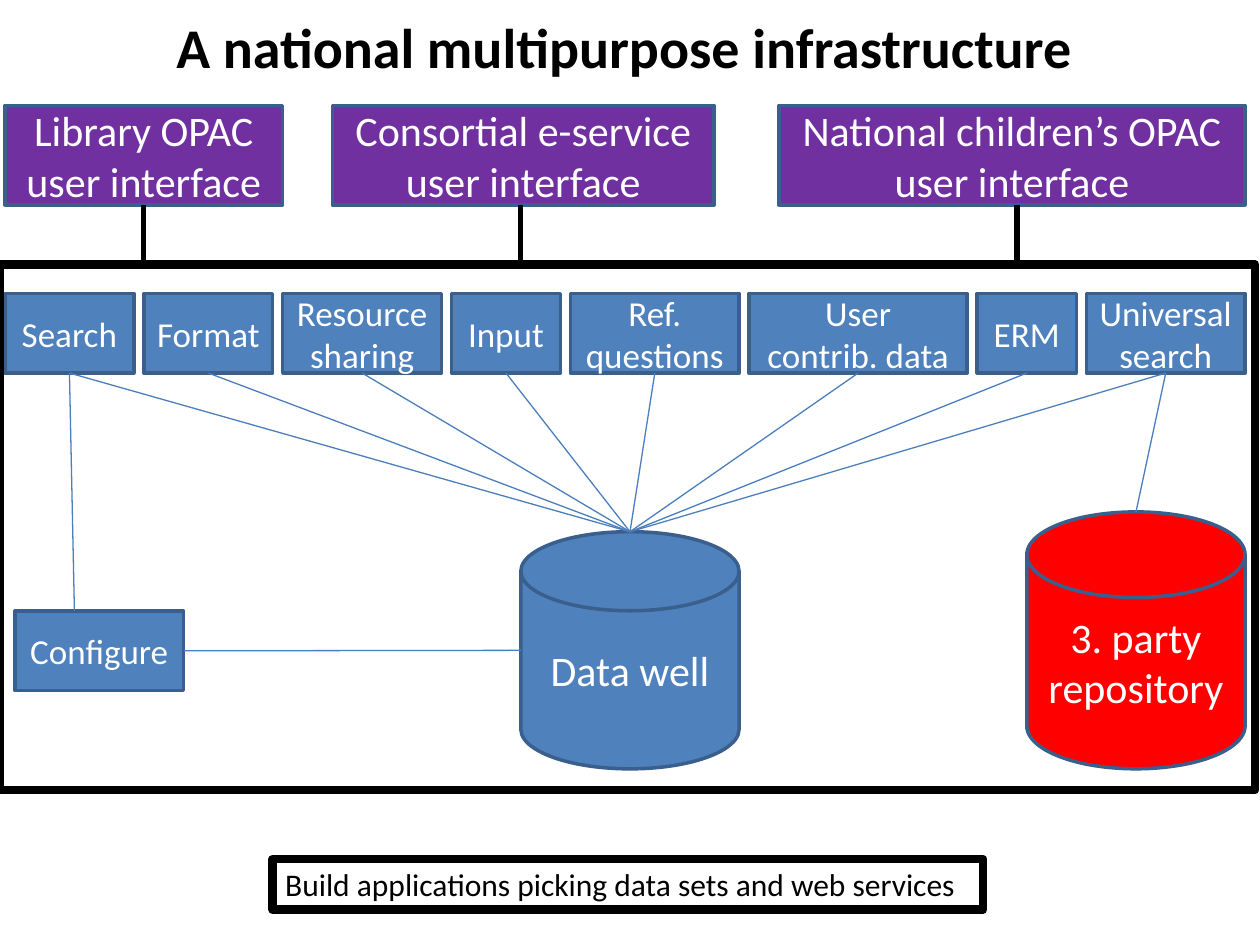
from dataclasses import dataclass

import lxml.etree
import pptx
import pptx.dml.color
import pptx.enum.shapes
import pptx.enum.text
import pptx.oxml.ns
import pptx.util

SHAPE = pptx.enum.shapes.MSO_SHAPE
ALIGN = pptx.enum.text.PP_ALIGN
ANCHOR = pptx.enum.text.MSO_ANCHOR

# Square grid cells, 127 columns across the slide.
WIDTH, HEIGHT = pptx.util.Inches(10), pptx.util.Inches(7.5)
CELL = WIDTH / 127

FONT = "Calibri"
BLUE, EDGE, LINK = "4F81BD", "3A5F8C", "4B7EBC"
PURPLE, RED, BLACK, WHITE = "7030A0", "FF0000", "000000", "FFFFFF"

MARGIN, GAP = 0.5, 1
INTERFACE_ROW, INTERFACE_HEIGHT = 10.65, 10
SERVICE_ROW, SERVICE_HEIGHT = 29.6, 8
FRAME_ROW = 26.65


@dataclass(frozen=True)
class Node:
    """A labelled box or cylinder, placed in grid columns and rows."""
    lines: tuple[str, ...]
    col: float
    row: float
    cols: float
    rows: float
    fill: str = BLUE
    size: int = 20
    kind: int = SHAPE.RECTANGLE

    @property
    def top(self) -> tuple[float, float]:
        return self.col + self.cols / 2, self.row

    @property
    def bottom(self) -> tuple[float, float]:
        return self.col + self.cols / 2, self.row + self.rows

    @property
    def left(self) -> tuple[float, float]:
        return self.col, self.row + self.rows / 2

    @property
    def right(self) -> tuple[float, float]:
        return self.col + self.cols, self.row + self.rows / 2


@dataclass(frozen=True)
class Interface:
    title: str
    col: float
    cols: float
    stem_col: float


INTERFACES = [
    Interface("Library OPAC", MARGIN, 28, 14.5),
    Interface("Consortial e-service", 33.5, 38.5, 52.5),
    Interface("National children’s OPAC", 78.5, 47, 102.5),
]
SERVICE_WIDTHS = [
    (("Search",), 13),
    (("Format",), 13),
    (("Resource", "sharing"), 16),
    (("Input",), 11),
    (("Ref.", "questions"), 17),
    (("User", "contrib. data"), 22),
    (("ERM",), 10),
    (("Universal", "search"), 16),
]
DATA_WELL = Node(("Data well",), 52.5, 53.6, 22, 23.9, BLUE, 24,
                 SHAPE.FLOWCHART_MAGNETIC_DISK)
REPOSITORY = Node(("3. party repository",), 103.5, 51.6, 22, 25.9, RED, 24,
                  SHAPE.FLOWCHART_MAGNETIC_DISK)
CONFIGURE = Node(("Configure",), 1.5, 61.6, 17, 8)


def grid(cells: float) -> int:
    return round(cells * CELL)


def rgb(value: str) -> pptx.dml.color.RGBColor:
    return pptx.dml.color.RGBColor.from_string(value)


def write(frame, lines, size: int, color: str, align, bold: bool = False) -> None:
    for index, line in enumerate(lines):
        paragraph = frame.paragraphs[0] if index == 0 else frame.add_paragraph()
        paragraph.alignment = align
        run = paragraph.add_run()
        run.text = line
        run.font.name = FONT
        run.font.size = pptx.util.Pt(size)
        run.font.bold = bold
        run.font.color.rgb = rgb(color)


def outline(shape, color: str, width: float) -> None:
    shape.line.color.rgb = rgb(color)
    shape.line.width = pptx.util.Pt(width)


def draw_node(slide, node: Node) -> None:
    shape = slide.shapes.add_shape(
        node.kind, *map(grid, (node.col, node.row, node.cols, node.rows)))
    shape.shadow.inherit = False
    shape.fill.solid()
    shape.fill.fore_color.rgb = rgb(node.fill)
    outline(shape, EDGE, 2)
    shape.text_frame.word_wrap = True
    shape.text_frame.vertical_anchor = ANCHOR.MIDDLE
    write(shape.text_frame, node.lines, node.size, WHITE, ALIGN.CENTER)


def draw_link(slide, start, end, color: str = LINK, width: float = 0.75) -> None:
    link = slide.shapes.add_connector(
        pptx.enum.shapes.MSO_CONNECTOR.STRAIGHT, *map(grid, (*start, *end)))
    outline(link, color, width)
    lxml.etree.SubElement(link._element.spPr, pptx.oxml.ns.qn("a:effectLst"))


def draw_frame(slide) -> None:
    frame = slide.shapes.add_shape(
        SHAPE.RECTANGLE, *map(grid, (0, FRAME_ROW, 126.5, 53)))
    frame.shadow.inherit = False
    frame.fill.background()
    outline(frame, BLACK, 5)


def fit_on_one_line(frame) -> None:
    frame.word_wrap = False
    frame.auto_size = pptx.enum.text.MSO_AUTO_SIZE.SHAPE_TO_FIT_TEXT
    frame.vertical_anchor = ANCHOR.TOP


def draw_title(slide) -> None:
    title = slide.shapes.title
    title.left, title.top, title.width, title.height = map(
        grid, (16.5, 0.6, 93.7, 8.1))
    fit_on_one_line(title.text_frame)
    write(title.text_frame, ["A national multipurpose infrastructure"],
          32, BLACK, ALIGN.LEFT, bold=True)


def draw_note(slide) -> None:
    note = slide.shapes.add_textbox(*map(grid, (27.5, 86.6, 71.6, 5.1)))
    outline(note, BLACK, 5)
    fit_on_one_line(note.text_frame)
    write(note.text_frame, ["Build applications picking data sets and web services"],
          18, BLACK, ALIGN.LEFT)


def service_nodes() -> list[Node]:
    nodes, col = [], MARGIN
    for lines, cols in SERVICE_WIDTHS:
        nodes.append(Node(lines, col, SERVICE_ROW, cols, SERVICE_HEIGHT))
        col += cols + GAP
    return nodes


def main() -> None:
    deck = pptx.Presentation()
    deck.slide_width, deck.slide_height = WIDTH, HEIGHT
    slide = deck.slides.add_slide(deck.slide_layouts.get_by_name("Title Only"))
    draw_title(slide)

    services = service_nodes()
    for node in [DATA_WELL, *services, CONFIGURE, REPOSITORY]:
        draw_node(slide, node)
    for service in services:
        draw_link(slide, service.bottom, DATA_WELL.top)
    draw_link(slide, services[0].bottom, (7.5, CONFIGURE.row))
    draw_link(slide, CONFIGURE.right, DATA_WELL.left)
    draw_link(slide, services[-1].bottom, REPOSITORY.top)

    draw_frame(slide)
    draw_note(slide)
    for interface in INTERFACES:
        node = Node((interface.title, "user interface"), interface.col,
                    INTERFACE_ROW, interface.cols, INTERFACE_HEIGHT, PURPLE, 24)
        draw_node(slide, node)
        draw_link(slide, (interface.stem_col, node.bottom[1]),
                  (interface.stem_col, FRAME_ROW), BLACK, 3)
    deck.save("out.pptx")


if __name__ == "__main__":
    main()
